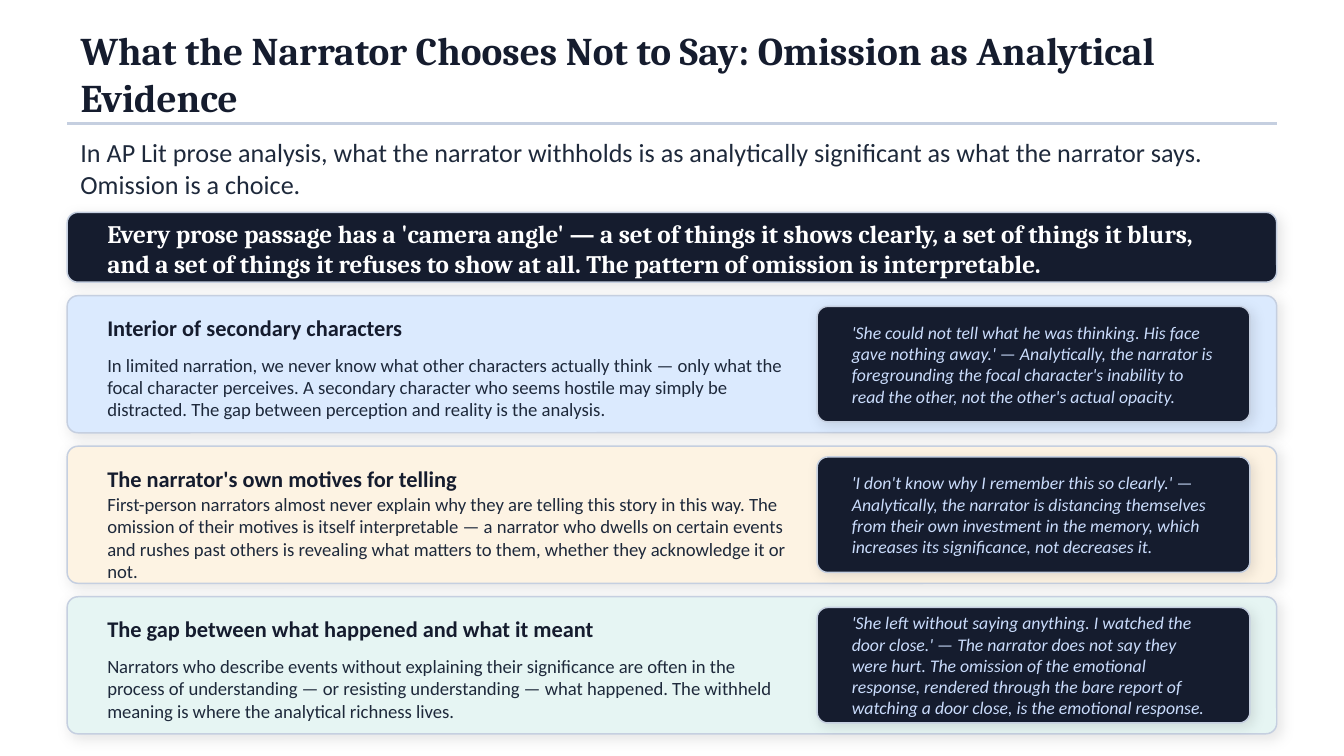
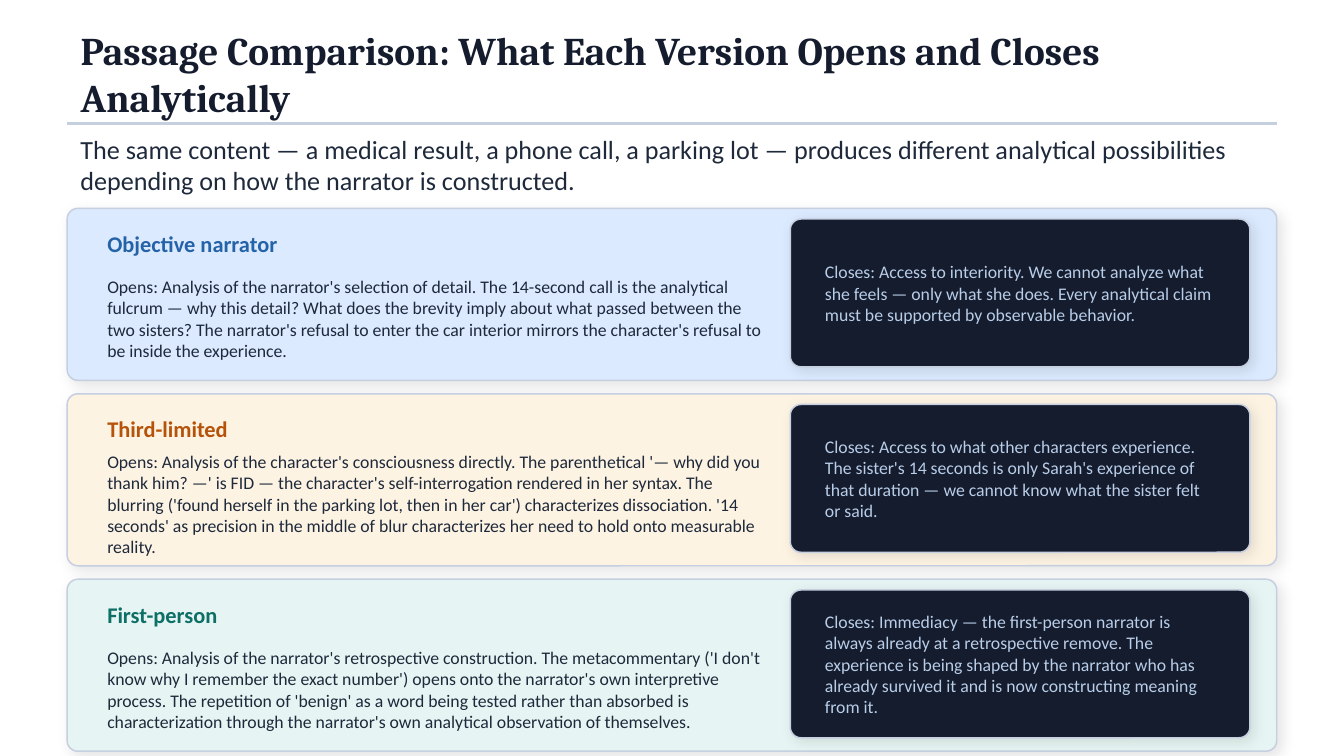
"""Build two slides on what a narrator leaves out and how each version reads."""
from lxml.etree import SubElement
from pptx import Presentation
from pptx.dml.color import RGBColor
from pptx.enum.shapes import MSO_CONNECTOR, MSO_SHAPE
from pptx.enum.text import MSO_ANCHOR, MSO_AUTO_SIZE, PP_ALIGN
from pptx.oxml import parse_xml
from pptx.oxml.ns import nsdecls, qn
from pptx.util import Inches, Pt

NAVY, INK, RULE, WHITE = "151C2E", "1E293B", "C5CFE0", "FFFFFF"
FILLS = ["DBEAFE", "FDF3E3", "E6F5F3"]
LEFT, WIDE, GAP, PAD = 0.5, 9, 0.1, 0.08
SHADE = (
    f'<a:effectLst {nsdecls("a")}><a:outerShdw blurRad="88900" dist="25400" '
    'dir="2700000" algn="bl" rotWithShape="0"><a:srgbClr val="000000">'
    '<a:alpha val="9000"/></a:srgbClr></a:outerShdw></a:effectLst>'
)


def write(slide, area, words, size, color, font="Calibri", bold=False, slant=False, box=None):
    """Put words in a new text box, or in the given placeholder."""
    place = [Inches(n) for n in area]
    if box is None:
        box = slide.shapes.add_textbox(*place)
    box.left, box.top, box.width, box.height = place
    frame = box.text_frame
    frame.text = words
    frame.word_wrap = True
    frame.auto_size = MSO_AUTO_SIZE.NONE
    frame.vertical_anchor = MSO_ANCHOR.MIDDLE
    frame.paragraphs[0].alignment = PP_ALIGN.LEFT
    style = frame.paragraphs[0].runs[0].font
    style.name, style.size = font, Pt(size)
    style.bold, style.italic = bold, slant
    style.color.rgb = RGBColor.from_string(color)


def panel(slide, area, fill):
    """Draw a rounded panel with a thin edge and a soft shadow."""
    shape = slide.shapes.add_shape(MSO_SHAPE.ROUNDED_RECTANGLE, *[Inches(n) for n in area])
    shape.adjustments[0] = 0.08 / area[3]
    shape.fill.solid()
    shape.fill.fore_color.rgb = RGBColor.from_string(fill)
    shape.line.color.rgb = RGBColor.from_string(RULE)
    shape.line.width = Pt(0.8)
    shape.element.spPr.append(parse_xml(SHADE))


pages = [
    {
        "title": "What the Narrator Chooses Not to Say: Omission as Analytical Evidence",
        "lead": "In AP Lit prose analysis, what the narrator withholds is as analytically significant as what the narrator says. Omission is a choice.",
        "lead_high": 0.5,
        "claim": "Every prose passage has a 'camera angle' — a set of things it shows clearly, a set of things it blurs, and a set of things it refuses to show at all. The pattern of omission is interpretable.",
        "top": 2.2, "high": 1.02, "head": (8.6, 0.32), "body": 5.3, "size": 10,
        "note_high": 0.86, "note_color": "CADCFC", "slant": True,
        "colors": [NAVY] * 3,
        "rows": [
            (
                "Interior of secondary characters",
                "In limited narration, we never know what other characters actually think — only what the focal character perceives. A secondary character who seems hostile may simply be distracted. The gap between perception and reality is the analysis.",
                "'She could not tell what he was thinking. His face gave nothing away.' — Analytically, the narrator is foregrounding the focal character's inability to read the other, not the other's actual opacity.",
            ),
            (
                "The narrator's own motives for telling",
                "First-person narrators almost never explain why they are telling this story in this way. The omission of their motives is itself interpretable — a narrator who dwells on certain events and rushes past others is revealing what matters to them, whether they acknowledge it or not.",
                "'I don't know why I remember this so clearly.' — Analytically, the narrator is distancing themselves from their own investment in the memory, which increases its significance, not decreases it.",
            ),
            (
                "The gap between what happened and what it meant",
                "Narrators who describe events without explaining their significance are often in the process of understanding — or resisting understanding — what happened. The withheld meaning is where the analytical richness lives.",
                "'She left without saying anything. I watched the door close.' — The narrator does not say they were hurt. The omission of the emotional response, rendered through the bare report of watching a door close, is the emotional response.",
            ),
        ],
    },
    {
        "title": "Passage Comparison: What Each Version Opens and Closes Analytically",
        "lead": "The same content — a medical result, a phone call, a parking lot — produces different analytical possibilities depending on how the narrator is constructed.",
        "lead_high": 0.45,
        "claim": None,
        "top": 1.55, "high": 1.28, "head": (2.2, 0.36), "body": 5.1, "size": 9.5,
        "note_high": 1.1, "note_color": "B8CDE8", "slant": False,
        "colors": ["2563A8", "B45309", "0D6F66"],
        "rows": [
            (
                "Objective narrator",
                "Opens: Analysis of the narrator's selection of detail. The 14-second call is the analytical fulcrum — why this detail? What does the brevity imply about what passed between the two sisters? The narrator's refusal to enter the car interior mirrors the character's refusal to be inside the experience.",
                "Closes: Access to interiority. We cannot analyze what she feels — only what she does. Every analytical claim must be supported by observable behavior.",
            ),
            (
                "Third-limited",
                "Opens: Analysis of the character's consciousness directly. The parenthetical '— why did you thank him? —' is FID — the character's self-interrogation rendered in her syntax. The blurring ('found herself in the parking lot, then in her car') characterizes dissociation. '14 seconds' as precision in the middle of blur characterizes her need to hold onto measurable reality.",
                "Closes: Access to what other characters experience. The sister's 14 seconds is only Sarah's experience of that duration — we cannot know what the sister felt or said.",
            ),
            (
                "First-person",
                "Opens: Analysis of the narrator's retrospective construction. The metacommentary ('I don't know why I remember the exact number') opens onto the narrator's own interpretive process. The repetition of 'benign' as a word being tested rather than absorbed is characterization through the narrator's own analytical observation of themselves.",
                "Closes: Immediacy — the first-person narrator is always already at a retrospective remove. The experience is being shaped by the narrator who has already survived it and is now constructing meaning from it.",
            ),
        ],
    },
]

deck = Presentation()
deck.slide_width = Inches(10)
deck.slide_height = deck.slide_width * 9 // 16

for page in pages:
    slide = deck.slides.add_slide(deck.slide_layouts[5])
    slide.background.fill.solid()
    slide.background.fill.fore_color.rgb = RGBColor.from_string(WHITE)
    write(slide, (LEFT, 0.22, WIDE, 0.65), page["title"], 21, NAVY, "Cambria", True,
          box=slide.shapes.title)
    rule = slide.shapes.add_connector(
        MSO_CONNECTOR.STRAIGHT, Inches(LEFT), Inches(0.92), Inches(LEFT + WIDE), Inches(0.92))
    rule.line.color.rgb = RGBColor.from_string(RULE)
    rule.line.width = Pt(1.2)
    SubElement(rule.element.spPr, qn("a:effectLst"))
    write(slide, (LEFT, 1, WIDE, page["lead_high"]), page["lead"], 14, INK)

    inner = LEFT + 0.2
    if page["claim"]:
        panel(slide, (LEFT, 1.58, WIDE, 0.52), NAVY)
        write(slide, (inner, 1.7, 8.6, 0.3), page["claim"], 13.5, WHITE, "Cambria", True)

    high, body, tall = page["high"], page["body"], page["note_high"]
    wide, head = page["head"]
    note = inner + body + PAD
    span = LEFT + WIDE - 0.2 - note
    for i, (name, text, quote) in enumerate(page["rows"]):
        top = page["top"] + i * (high + GAP)
        y = top + PAD
        panel(slide, (LEFT, top, WIDE, high), FILLS[i])
        write(slide, (inner, y, wide, head), name, 12, page["colors"][i], bold=True)
        drop = head + 0.02
        write(slide, (inner, y + drop, body, tall - drop), text, page["size"], INK)
        panel(slide, (note, y, span, tall), NAVY)
        write(slide, (note + 0.16, y + 0.04, span - 0.32, tall - 0.08), quote, 9.5,
              page["note_color"], slant=page["slant"])

deck.save("out.pptx")
